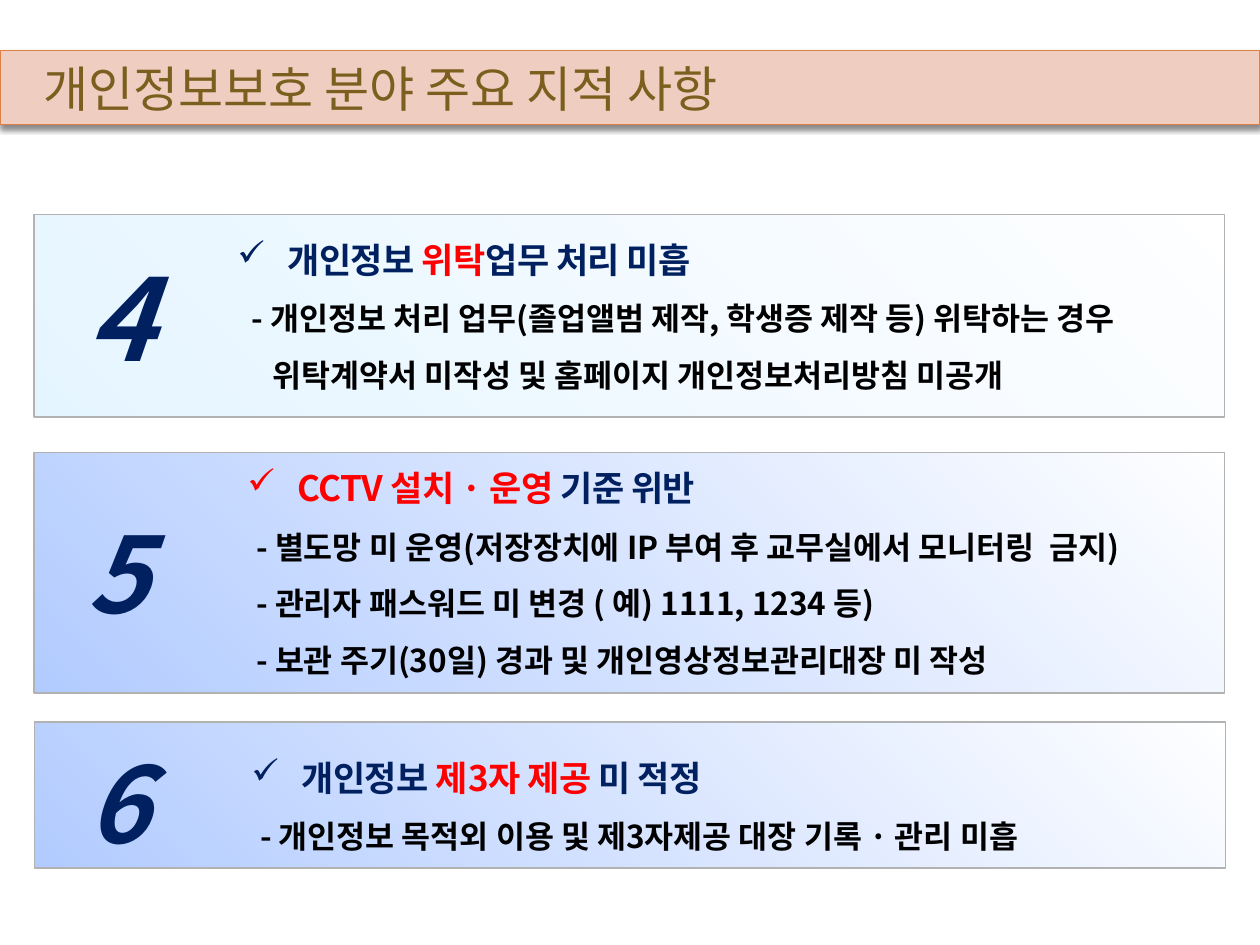
import lxml.etree
import pptx
import pptx.dml.color
import pptx.enum.shapes
import pptx.enum.text
import pptx.oxml.ns
import pptx.util

Pt = pptx.util.Pt
qn = pptx.oxml.ns.qn
Shapes = pptx.enum.shapes.MSO_SHAPE
Align = pptx.enum.text.PP_ALIGN
Anchor = pptx.enum.text.MSO_ANCHOR

FONT = "Noto Sans CJK KR"
NAVY, RED, BLACK, WHITE = "002060", "FF0000", "000000", "FFFFFF"
PALE, BLUE = "CCECFF", "6699FF"
HEAD_INDENT = 28.8

# Each item: panel (left, top, height, colour), number (text, top, height, size, spacing),
# body (left, top), heading line spacing, heading runs, detail lines (indent, text)
ITEMS = [
    ((19.4, 122.4, 115.9, PALE), ("4", 138.2, 85, 65, 0), (127.4, 149.8), 1.5,
     [("개인정보 ", NAVY), ("위탁", RED), ("업무 처리 미흡", NAVY)],
     [(8, "- 개인정보 처리 업무(졸업앨범 제작, 학생증 제작 등) 위탁하는 경우"),
      (20, "위탁계약서 미작성 및 홈페이지 개인정보처리방침 미공개")]),
    ((19.4, 258.5, 137.5, BLUE), ("5", 287.3, 80, 60, -3), (133.2, 302.4), 1,
     [("CCTV 설치 · 운영 ", RED), ("기준 위반", NAVY)],
     [(5, "- 별도망 미 운영(저장장치에 IP 부여 후 교무실에서 모니터링  금지)"),
      (5, "- 관리자 패스워드 미 변경 ( 예) 1111, 1234 등)"),
      (5, "- 보관 주기(30일) 경과 및 개인영상정보관리대장 미 작성")]),
    ((19.8, 412.6, 83.5, BLUE), ("6", 418.3, 80, 60, -3), (135.4, 435.6), 1,
     [("개인정보 ", NAVY), ("제3자 제공 ", RED), ("미 적정", NAVY)],
     [(5, "- 개인정보 목적외 이용 및 제3자제공 대장 기록 · 관리 미흡")]),
]


def colour(value):
    return pptx.dml.color.RGBColor.from_string(value)


def set_line(shape, value, width):
    shape.line.color.rgb = colour(value)
    shape.line.width = Pt(width)


def shadow_effects(blur, distance, angle, opacity):
    """Return an effect list with one black outer shadow."""
    effects = lxml.etree.Element(qn("a:effectLst"))
    shadow = lxml.etree.SubElement(
        effects, qn("a:outerShdw"), blurRad=str(Pt(blur)), dist=str(Pt(distance)),
        dir=str(angle * 60000), algn="tl", rotWithShape="0")
    black = lxml.etree.SubElement(shadow, qn("a:srgbClr"), val=BLACK)
    lxml.etree.SubElement(black, qn("a:alpha"), val=str(opacity * 1000))
    return effects


def add_run(para, text, size, value, bold=True, spacing=0):
    span = para.add_run()
    span.text = text
    span.font.size = Pt(size)
    span.font.bold = bold
    span.font.color.rgb = colour(value)
    span.font.name = FONT
    properties = span.font._element
    lxml.etree.SubElement(properties, qn("a:ea"), typeface=FONT)
    if spacing:
        properties.set("spc", str(round(spacing * 100)))
    return span


def indent(para, left, first=0):
    properties = para._p.get_or_add_pPr()
    properties.set("marL", str(Pt(left)))
    properties.set("indent", str(Pt(first)))
    return properties


def format_title(title):
    title.left, title.top, title.width, title.height = Pt(0), Pt(28.8), Pt(720), Pt(42.5)
    title.fill.solid()
    title.fill.fore_color.rgb = colour("EFCDC1")
    set_line(title, "DD8047", 0.79)
    title._element.spPr.append(shadow_effects(3, 2.4, 90, 45))
    frame = title.text_frame
    frame.auto_size = pptx.enum.text.MSO_AUTO_SIZE.NONE
    frame.vertical_anchor = Anchor.MIDDLE
    frame.margin_left = Pt(25)
    para = frame.paragraphs[0]
    para.alignment = Align.LEFT
    add_run(para, "개인정보보호 분야 주요 지적 사항", 28, "7C5F1E", bold=False)


def add_panel(page, left, top, height, start):
    panel = page.shapes.add_shape(
        Shapes.RECTANGLE, Pt(left), Pt(top), Pt(680.4), Pt(height))
    panel.shadow.inherit = False
    panel.fill.gradient()
    panel.fill.gradient_angle = 45
    for stop, value, position in zip(panel.fill.gradient_stops, (start, WHITE), (0, 1)):
        stop.color.rgb = colour(value)
        stop.position = position
    for stop_colour in panel._element.spPr.iter(qn("a:srgbClr")):
        lxml.etree.SubElement(stop_colour, qn("a:alpha"), val="49000")
    set_line(panel, "B2B2B2", 0.75)


def add_number(page, text, top, height, size, spacing):
    box = page.shapes.add_textbox(Pt(42.5), Pt(top), Pt(65.5), Pt(height))
    box.text_frame.word_wrap = True
    box.text_frame.auto_size = pptx.enum.text.MSO_AUTO_SIZE.SHAPE_TO_FIT_TEXT
    span = add_run(box.text_frame.paragraphs[0], text, size, NAVY, spacing=spacing)
    span.font.italic = True
    fill = span.font._element.find(qn("a:solidFill"))
    fill.addnext(shadow_effects(0, 3, 45, 50))


def add_body(page, left, top, head_spacing, heading, details):
    box = page.shapes.add_shape(
        Shapes.ROUNDED_RECTANGLE, Pt(left), Pt(top), Pt(465.1), Pt(49.7))
    box.adjustments[0] = 0.08
    box.shadow.inherit = False
    box.fill.background()
    box.line.fill.background()
    frame = box.text_frame
    frame.word_wrap = False
    frame.vertical_anchor = Anchor.MIDDLE

    # Heading with a check mark
    para = frame.paragraphs[0]
    para.alignment = Align.LEFT
    para.line_spacing = head_spacing
    properties = indent(para, HEAD_INDENT, -HEAD_INDENT)
    lxml.etree.SubElement(properties, qn("a:buChar"), char="✓")
    for text, value in heading:
        add_run(para, text, 20, value, spacing=-0.4)

    # Detail lines
    for left_indent, text in details:
        para = frame.add_paragraph()
        para.alignment = Align.LEFT
        para.line_spacing = 1.5
        indent(para, left_indent)
        add_run(para, text, 18, BLACK)


def main():
    deck = pptx.Presentation()
    deck.slide_width, deck.slide_height = Pt(720), Pt(540)
    page = deck.slides.add_slide(deck.slide_layouts.get_by_name("Title Only"))
    format_title(page.shapes.title)
    for panel, number, position, head_spacing, heading, details in ITEMS:
        add_panel(page, *panel)
        add_number(page, *number)
        add_body(page, *position, head_spacing, heading, details)
    deck.save("out.pptx")


if __name__ == "__main__":
    main()
